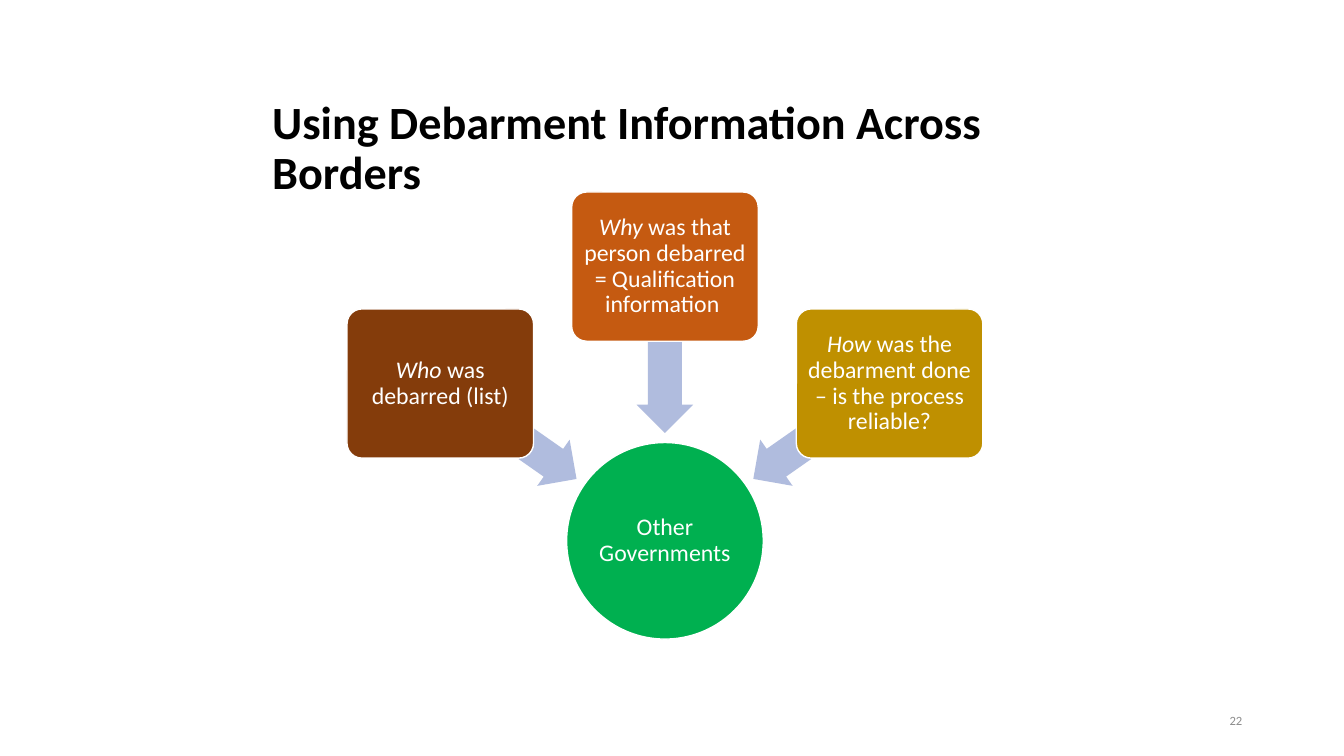
"""Build the slide on using debarment information across borders."""
import math

from pptx import Presentation
from pptx import util as u
from pptx.dml.color import RGBColor
from pptx.enum import shapes, text

CELL = u.Inches(0.1)
HUB_X, HUB_Y = 65.95, 53.65
HUB_SIZE = 19.5
CARD_WIDTH, CARD_HEIGHT = 18.5, 14.8
ARROW_LENGTH, ARROW_HEIGHT = 16.5, 5.6
CARD_RADIUS, ARROW_RADIUS = 27.2, 18.95
CARDS = [
    (215, "843C0B", "Who ", "was debarred (list)"),
    (270, "C55A11", "Why ", "was that person debarred = Qualification information "),
    (325, "BF9000", "How ", "was the debarment done – is the process reliable?"),
]


def cells(count):
    """Turn a count of grid cells into a length."""
    return u.Emu(round(count * CELL))


def colour(value):
    """Turn a hex string into a colour."""
    return RGBColor.from_string(value)


def write(box, *runs, size=17, ink="FFFFFF", bold=False, align=text.PP_ALIGN.CENTER,
          spacing=0.9, inset=None):
    """Fill a box with one paragraph of (words, italic) runs."""
    frame = box.text_frame
    frame.word_wrap = True
    frame.auto_size = text.MSO_AUTO_SIZE.NONE
    frame.vertical_anchor = text.MSO_ANCHOR.MIDDLE
    if inset is not None:
        frame.margin_left = frame.margin_right = u.Inches(inset)
        frame.margin_top = frame.margin_bottom = u.Inches(inset)
    para = frame.paragraphs[0]
    para.alignment = align
    para.line_spacing = spacing
    for words, italic in runs:
        span = para.add_run()
        span.text = words
        font = span.font
        font.name, font.size = "Calibri", u.Pt(size)
        font.bold, font.italic = bold, italic
        font.color.rgb = colour(ink)


def place(box, left, top, width, height):
    """Move and size a box on the grid."""
    box.left, box.top = cells(left), cells(top)
    box.width, box.height = cells(width), cells(height)


def add_centred(page, kind, x, y, width, height, fill, outline=None):
    """Add a filled preset shape around a centre point."""
    shape = page.shapes.add_shape(kind, cells(x - width / 2), cells(y - height / 2),
                                  cells(width), cells(height))
    shape.shadow.inherit = False
    shape.fill.solid()
    shape.fill.fore_color.rgb = colour(fill)
    if outline:
        shape.line.color.rgb = colour(outline)
        shape.line.width = u.Pt(1)
    else:
        shape.line.fill.background()
    return shape


def around_hub(angle, radius):
    """Give the point at an angle and distance from the hub."""
    turn = math.radians(angle)
    return HUB_X + radius * math.cos(turn), HUB_Y + radius * math.sin(turn)


def add_title(page, words):
    """Format the title placeholder."""
    title = page.shapes.title
    place(title, 26, 9.4, 86.2, 10.9)
    write(title, (words, False), size=33, ink="000000", bold=True,
          align=text.PP_ALIGN.LEFT)


def add_hub(page, words):
    """Add the central circle."""
    hub = add_centred(page, shapes.MSO_SHAPE.OVAL, HUB_X, HUB_Y, HUB_SIZE, HUB_SIZE,
                      "00B050", "FFFFFF")
    write(hub, (words, False), inset=0.01)


def add_spoke(page, angle, fill, question, rest):
    """Add a card and the arrow that leads from it to the hub."""
    arrow = add_centred(page, shapes.MSO_SHAPE.LEFT_ARROW,
                        *around_hub(angle, ARROW_RADIUS),
                        ARROW_LENGTH, ARROW_HEIGHT, "B0BCDE")
    arrow.adjustments[0], arrow.adjustments[1] = 0.6, 0.5
    arrow.rotation = angle
    card = add_centred(page, shapes.MSO_SHAPE.ROUNDED_RECTANGLE,
                       *around_hub(angle, CARD_RADIUS),
                       CARD_WIDTH, CARD_HEIGHT, fill, "FFFFFF")
    card.adjustments[0] = 0.1
    write(card, (question, True), (rest, False), inset=0.04)


def add_page_number(page, number):
    """Add the page number at the lower right."""
    box = page.shapes.add_textbox(0, 0, 0, 0)
    place(box, 94.2, 69.5, 30, 4)
    write(box, (number, False), size=9, ink="8C8C8C", align=text.PP_ALIGN.RIGHT,
          spacing=1.0)


def main():
    """Build and save the deck."""
    deck = Presentation()
    deck.slide_width, deck.slide_height = u.Inches(13.33), u.Inches(7.5)
    page = deck.slides.add_slide(deck.slide_layouts.get_by_name("Title Only"))
    add_title(page, "Using Debarment Information Across Borders")
    add_hub(page, "Other Governments")
    for card in CARDS:
        add_spoke(page, *card)
    add_page_number(page, "22")
    deck.save("out.pptx")


if __name__ == "__main__":
    main()
